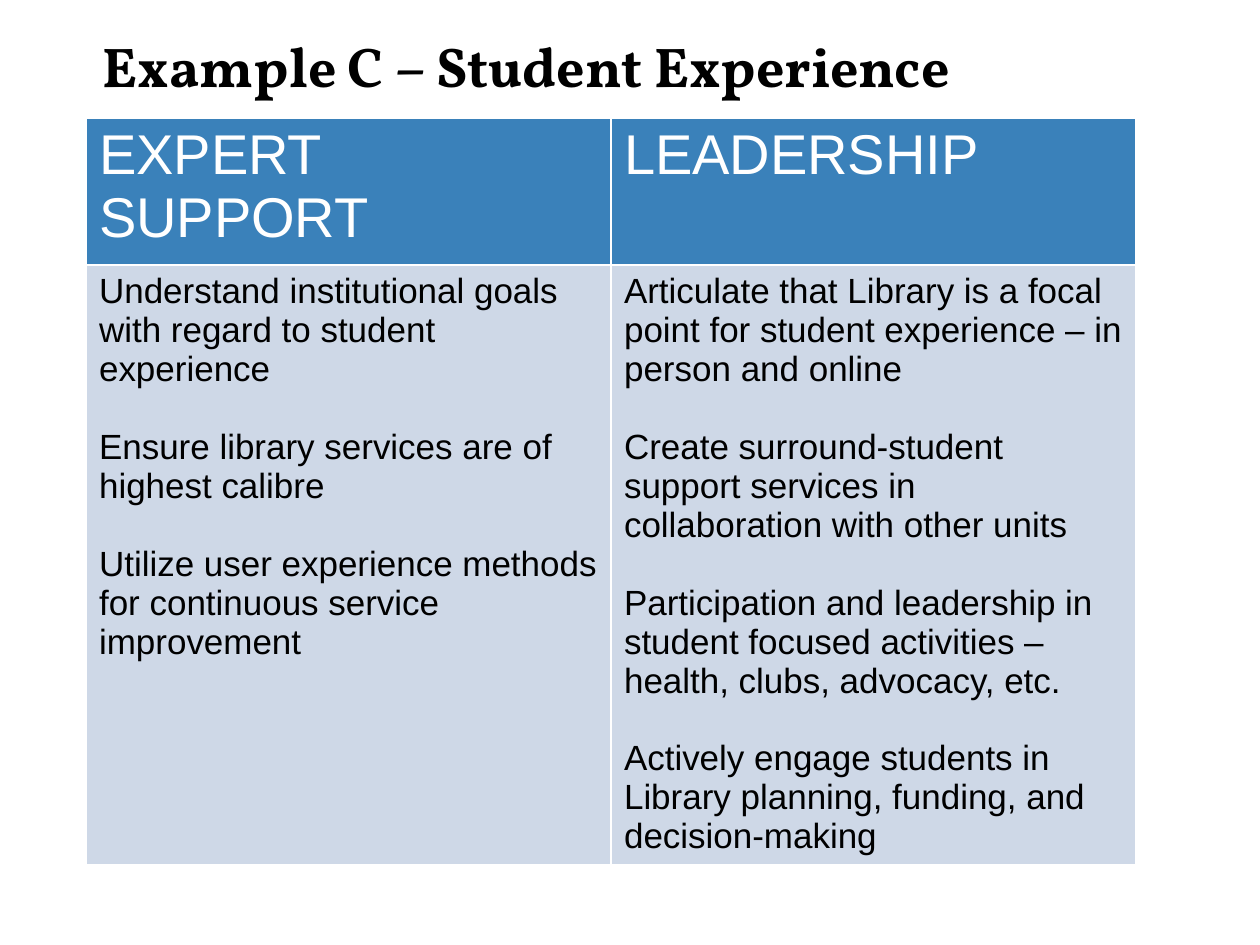
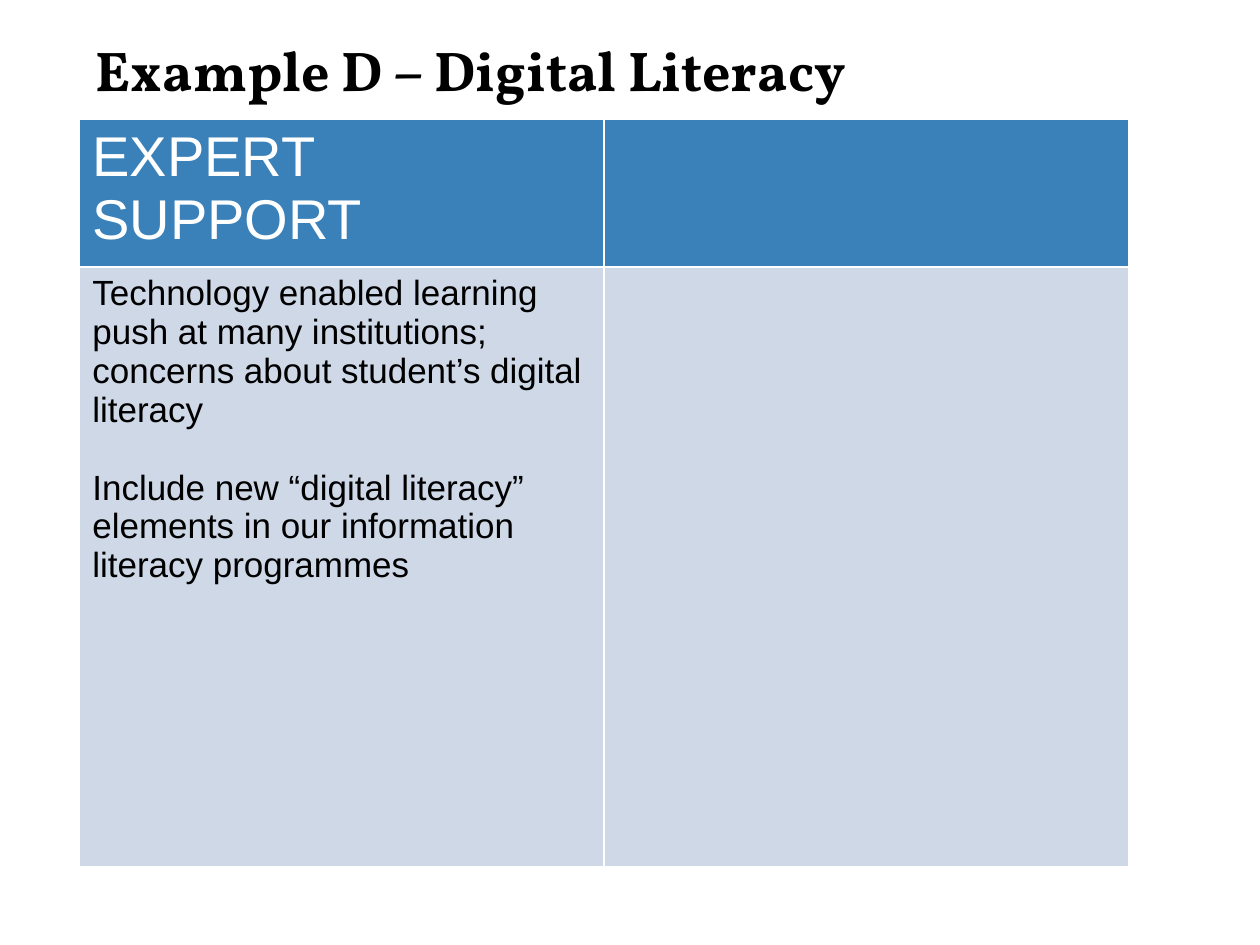
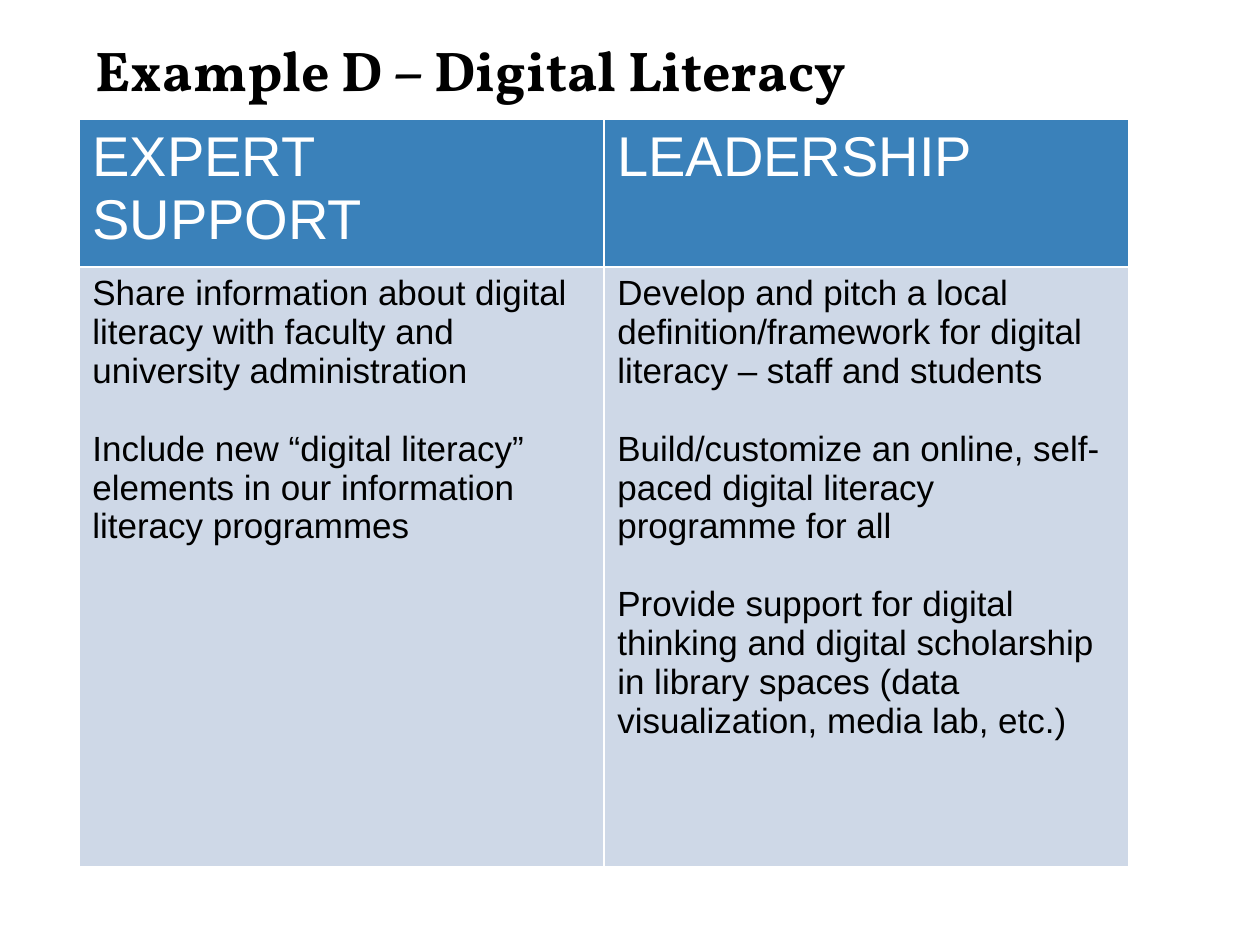
from collections import namedtuple
from dataclasses import dataclass

from lxml.etree import SubElement
from pptx import Presentation
from pptx.dml.color import RGBColor
from pptx.enum.text import MSO_ANCHOR, MSO_AUTO_SIZE, PP_ALIGN
from pptx.oxml.ns import qn
from pptx.util import Inches, Pt

Box = namedtuple("Box", "left top width height")


@dataclass(frozen=True)
class Theme:
    """Colours, fonts and sizes shared by the slides."""

    black: str = "000000"
    white: str = "FFFFFF"
    header_fill: str = "3A81BA"
    body_fill: str = "CED8E7"
    title_font: str = "Vollkorn"
    text_font: str = "Arial"
    heading_size: float = 24
    body_size: float = 15
    paragraph_gap: float = 16.75
    border_width: float = 1


THEME = Theme()
SLIDE_WIDTH = 7.5
SLIDE_FORMAT = {
    "slide_width": Inches(SLIDE_WIDTH),
    "slide_height": Inches(SLIDE_WIDTH * 3 / 4),
}
ROW_HEIGHTS = (0.88, 3.57)
TITLE_FONT = {"name": THEME.title_font, "size": Pt(THEME.heading_size), "bold": True}
HEADER_FONT = {"name": THEME.text_font, "size": Pt(THEME.heading_size), "bold": False}
BODY_FONT = {"name": THEME.text_font, "size": Pt(THEME.body_size), "bold": False}
TITLE_FRAME = {
    "word_wrap": True,
    "auto_size": MSO_AUTO_SIZE.NONE,
    "vertical_anchor": MSO_ANCHOR.MIDDLE,
    **{f"margin_{side}": Inches(0.1) for side in ("left", "top", "right", "bottom")},
}
CELL_FORMAT = {
    "margin_left": Inches(0.08),
    "margin_right": Inches(0.08),
    "margin_top": Inches(0.04),
    "margin_bottom": Inches(0.04),
    "vertical_anchor": MSO_ANCHOR.TOP,
}
TABLE_FORMAT = {"first_row": True, "horz_banding": False}

EXPERT = "EXPERT SUPPORT"
LEADERSHIP = "LEADERSHIP"
NEW_ELEMENTS = (
    "Include new “digital literacy” elements in our information literacy programmes"
)
STUDENT_TITLE = "Example C – Student Experience"
DIGITAL_TITLE = "Example D – Digital Literacy"
STUDENT_BOXES = (Box(0.51, 0.07, 6.25, 0.63), Box(0.51, 0.7, 6.25, 4.45))
DIGITAL_BOXES = (Box(0.47, 0.11, 6.25, 0.6), Box(0.47, 0.71, 6.25, 4.45))

SLIDES = [
    (STUDENT_TITLE, STUDENT_BOXES, [
        (EXPERT, [
            "Understand institutional goals with regard to student experience",
            "Ensure library services are of highest calibre",
            "Utilize user experience methods for continuous service improvement",
        ]),
        (LEADERSHIP, [
            "Articulate that Library is a focal point for student experience – "
            "in person and online",
            "Create surround-student support services in collaboration with other units",
            "Participation and leadership in student focused activities –"
            "health, clubs, advocacy, etc.",
            "Actively engage students in Library planning, funding, and decision-making",
        ]),
    ]),
    (DIGITAL_TITLE, DIGITAL_BOXES, [
        (EXPERT, [
            "Technology enabled learning push at many institutions; "
            "concerns about student’s digital literacy",
            NEW_ELEMENTS,
        ]),
        ("", []),
    ]),
    (DIGITAL_TITLE, DIGITAL_BOXES, [
        (EXPERT, [
            "Share information about digital literacy with faculty and "
            "university administration",
            NEW_ELEMENTS,
        ]),
        (LEADERSHIP, [
            "Develop and pitch a local definition/framework for digital literacy – "
            "staff and students",
            "Build/customize an online, self-paced digital literacy programme for all",
            "Provide support for digital thinking and digital scholarship in "
            "library spaces (data visualization, media lab, etc.)",
        ]),
    ]),
]


def apply_format(target, values):
    """Set each named attribute on the target."""
    for attribute, value in values.items():
        setattr(target, attribute, value)


def write_paragraphs(frame, texts, font, colour):
    """Write the texts as paragraphs set apart by one line."""
    for index, text in enumerate(texts):
        paragraph = frame.add_paragraph() if index else frame.paragraphs[0]
        paragraph.alignment = PP_ALIGN.LEFT
        paragraph.space_before = Pt(THEME.paragraph_gap if index else 0)
        run = paragraph.add_run()
        run.text = text
        apply_format(run.font, font)
        run.font.color.rgb = RGBColor.from_string(colour)


def add_border(cell, side):
    """Draw a white border on one side of a cell."""
    properties = cell._tc.get_or_add_tcPr()
    line = SubElement(properties, qn(f"a:ln{side}"), w=str(Pt(THEME.border_width)))
    SubElement(SubElement(line, qn("a:solidFill")), qn("a:srgbClr"), val=THEME.white)


def fill_cell(cell, texts, font, text_colour, fill_colour):
    """Format a cell and write its text."""
    apply_format(cell, CELL_FORMAT)
    for side in "LRTB":
        add_border(cell, side)
    cell.fill.solid()
    cell.fill.fore_color.rgb = RGBColor.from_string(fill_colour)
    write_paragraphs(cell.text_frame, texts, font, text_colour)


def place_title(slide, box, text):
    """Place the slide title in its box."""
    title = slide.shapes.title
    apply_format(title, {side: Inches(size) for side, size in box._asdict().items()})
    apply_format(title.text_frame, TITLE_FRAME)
    write_paragraphs(title.text_frame, [text], TITLE_FONT, THEME.black)


def place_roles_table(slide, box, roles):
    """Place a table with one column for each role."""
    table = slide.shapes.add_table(
        len(ROW_HEIGHTS), len(roles), *(Inches(size) for size in box)
    ).table
    apply_format(table, TABLE_FORMAT)
    for row, height in zip(table.rows, ROW_HEIGHTS):
        row.height = Inches(height)
    for index, (heading, actions) in enumerate(roles):
        table.columns[index].width = Inches(box.width / len(roles))
        fill_cell(table.cell(0, index), [heading] if heading else [], HEADER_FONT,
                  THEME.white, THEME.header_fill)
        fill_cell(table.cell(1, index), actions, BODY_FONT,
                  THEME.black, THEME.body_fill)


def build_example_slide(deck, title, boxes, roles):
    """Add a slide with a title above its table of roles."""
    slide = deck.slides.add_slide(deck.slide_layouts.get_by_name("Title Only"))
    title_box, table_box = boxes
    place_title(slide, title_box, title)
    place_roles_table(slide, table_box, roles)


def main():
    """Build and save the presentation."""
    deck = Presentation()
    apply_format(deck, SLIDE_FORMAT)
    for title, boxes, roles in SLIDES:
        build_example_slide(deck, title, boxes, roles)
    deck.save("out.pptx")


if __name__ == "__main__":
    main()
